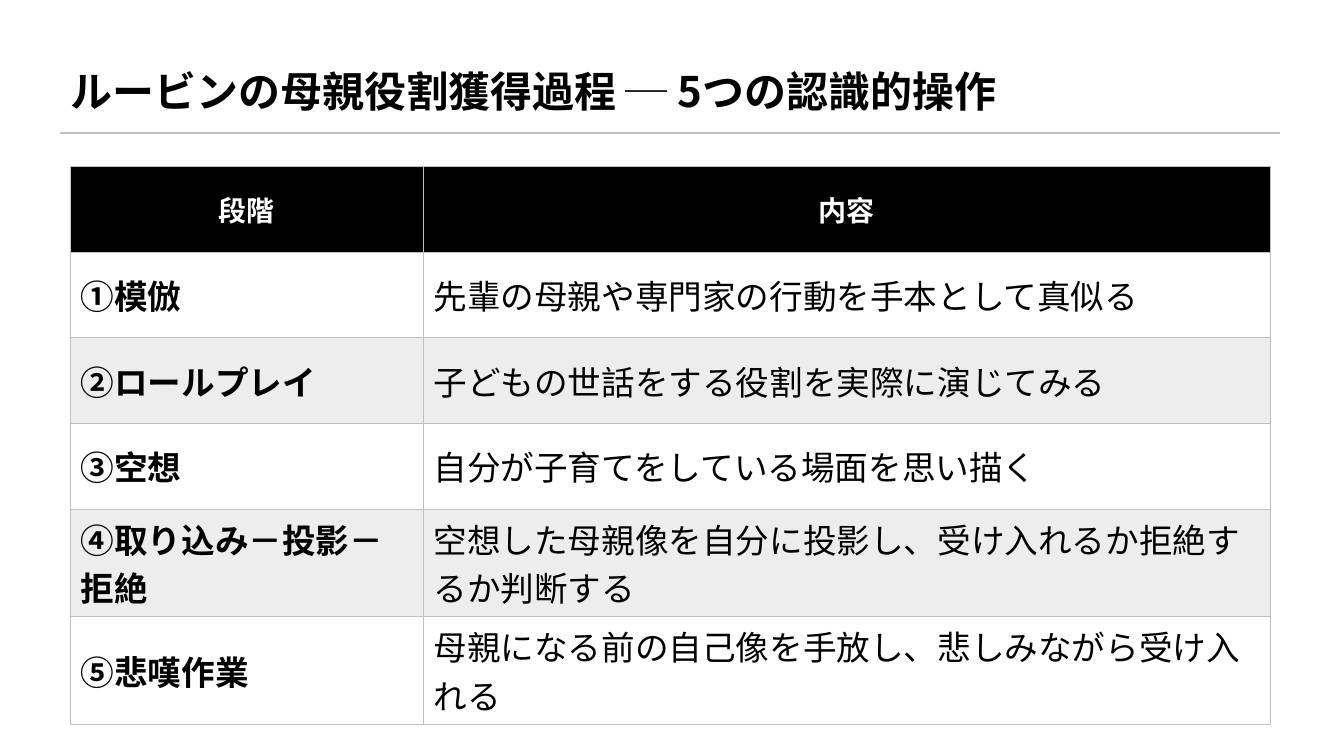
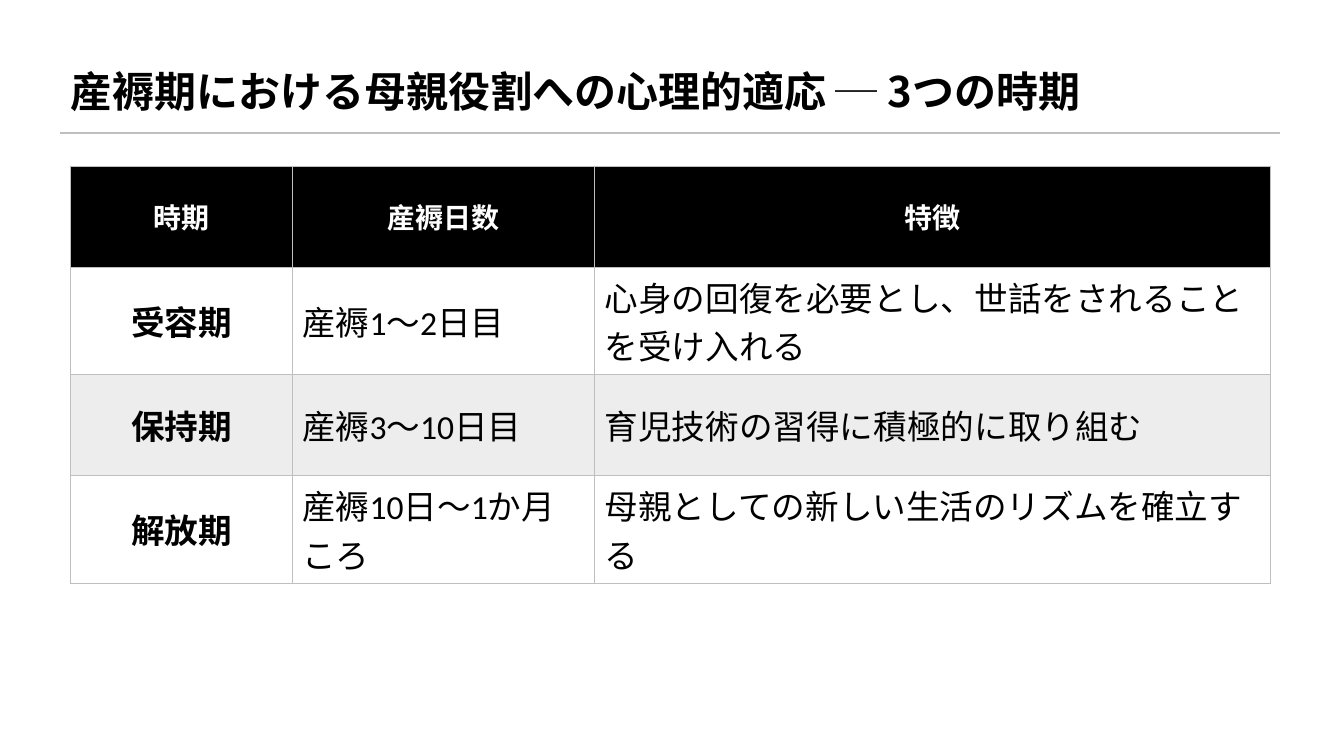
from dataclasses import dataclass

import lxml.etree
import pptx
import pptx.dml.color
import pptx.enum.shapes
import pptx.enum.text
import pptx.oxml.ns
import pptx.util

Pt = pptx.util.Pt
RGBColor = pptx.dml.color.RGBColor
PP_ALIGN = pptx.enum.text.PP_ALIGN
MIDDLE = pptx.enum.text.MSO_ANCHOR.MIDDLE
qn = pptx.oxml.ns.qn

BLACK = RGBColor(0x00, 0x00, 0x00)
WHITE = RGBColor(0xFF, 0xFF, 0xFF)
BAND_GREY = RGBColor(0xED, 0xED, 0xED)
RULE_GREY = RGBColor(0xBF, 0xBF, 0xBF)

JAPANESE_FONT = "Noto Sans CJK JP"
TABLE_FONT = "Calibri"
TITLE_ONLY_LAYOUT = 5
TITLE_LEFT, TITLE_WIDTH = 43.2, 871.2
TABLE_LEFT, TABLE_TOP = 50.4, 118.8
RULE_Y = 95.04


@dataclass(frozen=True)
class TableSlide:
    title: str
    column_widths: tuple[float, ...]
    row_height: float
    stage_align: PP_ALIGN
    rows: tuple[tuple[str, ...], ...]


SLIDES = (
    TableSlide(
        title="ルービンの母親役割獲得過程 ─ 5つの認識的操作",
        column_widths=(252, 604.8),
        row_height=61.2,
        stage_align=PP_ALIGN.LEFT,
        rows=(
            ("段階", "内容"),
            ("①模倣", "先輩の母親や専門家の行動を手本として真似る"),
            ("②ロールプレイ", "子どもの世話をする役割を実際に演じてみる"),
            ("③空想", "自分が子育てをしている場面を思い描く"),
            ("④取り込み－投影－拒絶", "空想した母親像を自分に投影し、受け入れるか拒絶するか判断する"),
            ("⑤悲嘆作業", "母親になる前の自己像を手放し、悲しみながら受け入れる"),
        ),
    ),
    TableSlide(
        title="産褥期における母親役割への心理的適応 ─ 3つの時期",
        column_widths=(158.4, 216, 482.4),
        row_height=72,
        stage_align=PP_ALIGN.CENTER,
        rows=(
            ("時期", "産褥日数", "特徴"),
            ("受容期", "産褥1〜2日目", "心身の回復を必要とし、世話をされることを受け入れる"),
            ("保持期", "産褥3〜10日目", "育児技術の習得に積極的に取り組む"),
            ("解放期", "産褥10日〜1か月ころ", "母親としての新しい生活のリズムを確立する"),
        ),
    ),
)


def write_text(frame, text: str, font_name: str, size: float, color: RGBColor,
               bold: bool, align: PP_ALIGN) -> None:
    paragraph = frame.paragraphs[0]
    paragraph.alignment = align
    run = paragraph.add_run()
    run.text = text
    run.font.size = Pt(size)
    run.font.bold = bold
    run.font.color.rgb = color
    run.font.name = font_name
    east_asian = lxml.etree.Element(qn("a:ea"), typeface=JAPANESE_FONT)
    run.font._element.find(qn("a:latin")).addnext(east_asian)


def add_title(slide, text: str) -> None:
    title = slide.shapes.title
    title.left, title.top = Pt(TITLE_LEFT), Pt(32.4)
    title.width, title.height = Pt(TITLE_WIDTH), Pt(64.8)
    frame = title.text_frame
    frame.word_wrap = True
    frame.auto_size = pptx.enum.text.MSO_AUTO_SIZE.NONE
    frame.vertical_anchor = MIDDLE
    write_text(frame, text, JAPANESE_FONT, 30, BLACK, True, PP_ALIGN.LEFT)


def add_title_rule(slide) -> None:
    rule = slide.shapes.add_connector(
        pptx.enum.shapes.MSO_CONNECTOR.STRAIGHT,
        Pt(TITLE_LEFT), Pt(RULE_Y), Pt(TITLE_LEFT + TITLE_WIDTH), Pt(RULE_Y))
    rule.line.color.rgb = RULE_GREY
    rule.line.width = Pt(1)
    lxml.etree.SubElement(rule._element.spPr, qn("a:effectLst"))


def set_cell_borders(cell) -> None:
    """Outline all four sides; the schema wants borders ahead of the fill."""
    properties = cell._tc.get_or_add_tcPr()
    for position, side in enumerate(("a:lnL", "a:lnR", "a:lnT", "a:lnB")):
        border = lxml.etree.Element(qn(side), w=str(Pt(0.75)))
        fill = lxml.etree.SubElement(border, qn("a:solidFill"))
        lxml.etree.SubElement(fill, qn("a:srgbClr"), val=str(RULE_GREY))
        properties.insert(position, border)


def add_stage_table(slide, content: TableSlide) -> None:
    row_count = len(content.rows)
    table = slide.shapes.add_table(
        row_count, len(content.column_widths), Pt(TABLE_LEFT), Pt(TABLE_TOP),
        Pt(sum(content.column_widths)), Pt(content.row_height * row_count)).table
    table.horz_banding = False
    for column, width in zip(table.columns, content.column_widths):
        column.width = Pt(width)
    for row_index, texts in enumerate(content.rows):
        table.rows[row_index].height = Pt(content.row_height)
        is_header = row_index == 0
        background = BLACK if is_header else (BAND_GREY, WHITE)[row_index % 2]
        for column_index, text in enumerate(texts):
            is_stage = column_index == 0
            if is_header:
                align = PP_ALIGN.CENTER
            else:
                align = content.stage_align if is_stage else PP_ALIGN.LEFT
            cell = table.cell(row_index, column_index)
            cell.vertical_anchor = MIDDLE
            cell.fill.solid()
            cell.fill.fore_color.rgb = background
            set_cell_borders(cell)
            write_text(cell.text_frame, text, TABLE_FONT, 20 if is_header else 24,
                       WHITE if is_header else BLACK, is_header or is_stage, align)


def main() -> None:
    presentation = pptx.Presentation()
    presentation.slide_width, presentation.slide_height = Pt(960), Pt(540)
    for content in SLIDES:
        slide = presentation.slides.add_slide(
            presentation.slide_layouts[TITLE_ONLY_LAYOUT])
        add_title(slide, content.title)
        add_title_rule(slide)
        add_stage_table(slide, content)
    presentation.save("out.pptx")


if __name__ == "__main__":
    main()
